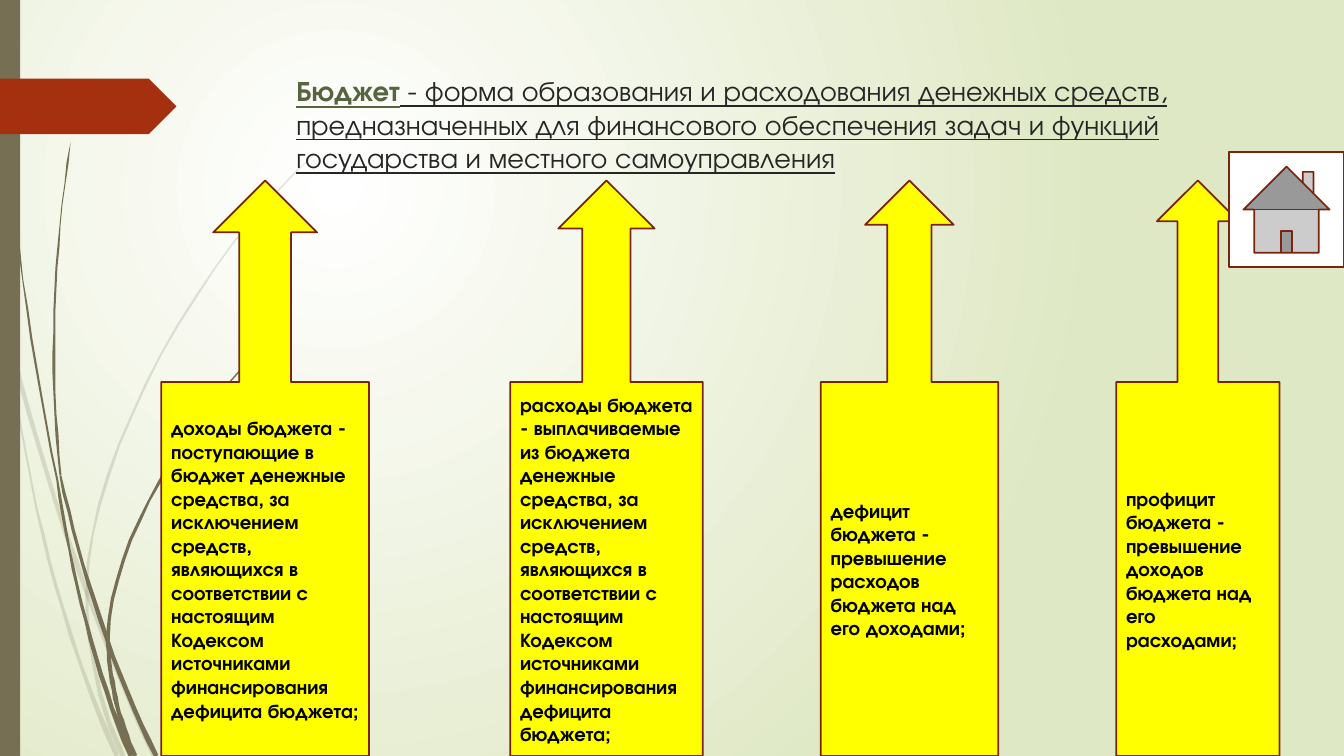
from math import hypot

from lxml.etree import SubElement
from pptx import Presentation
from pptx.dml.color import RGBColor
from pptx.enum.shapes import MSO_SHAPE
from pptx.enum.text import MSO_ANCHOR, PP_ALIGN
from pptx.oxml.ns import qn
from pptx.util import Pt

PX = 9144  # 100 px to the inch
SLIDE_SIZE = (1333, 750)

THEME = {
    "font": "TeX Gyre Adventor",
    "title_size": 20, "callout_size": 14, "line_width": 1.25,
    "center": "FFFFFF", "edge": "DFE8C4",
    "grass": "766F54", "tag": "A53010", "outline": "7A240C",
    "callout": "FFFF00", "button": "FFFFFF",
    "term": "56653E", "title": "262626", "ink": "000000",
}

TITLE_BOX = (284, 68, 975, 140)
TERM = "Бюджет"
DEFINITION = (" - форма образования и расходования денежных средств, предназначенных "
              "для финансового обеспечения задач и функций государства и местного самоуправления")

CALLOUT_TOP, CALLOUT_HEIGHT = 179, 571
CALLOUTS = [  # left, width, text
    (160, 206, "доходы бюджета - поступающие в бюджет денежные средства, за исключением средств, "
               "являющихся в соответствии с настоящим Кодексом источниками финансирования дефицита бюджета;"),
    (506, 191, "расходы бюджета - выплачиваемые из бюджета денежные средства, за исключением средств, "
               "являющихся в соответствии с настоящим Кодексом источниками финансирования дефицита бюджета;"),
    (814, 176, "дефицит бюджета - превышение расходов бюджета над его доходами;"),
    (1107, 162, "профицит бюджета - превышение доходов бюджета над его расходами;"),
]
HOME_BUTTON = (1219, 151, 114, 114)
SIDE_BAR = (0, 0, 20, 750)
TAG = (0, 78, 175, 55)

# Each stem: tip, two control points, root, then its thickness at tip and root
PALE_TUFT = {
    "left stem": ((0, 290), (30, 440), (93, 621), (153, 750), 4, 5),
    "middle stem": ((11, 350), (24, 480), (64, 635), (116, 750), 1, 5),
    "long arc": ((312, 153), (207, 245), (88, 445), (86, 585), 1, 3),
    "arc root": ((86, 585), (86, 650), (103, 710), (122, 750), 3, 5),
}
DARK_TUFT = {
    "left stem": ((4, 0), (3, 170), (27, 330), (57, 477), 1, 2),
    "left root": ((57, 477), (70, 565), (95, 670), (130, 750), 2, 5),
    "upright stem": ((70, 141), (53, 250), (48, 365), (60, 472), 1, 3),
    "upright root": ((60, 472), (80, 565), (114, 670), (155, 750), 3, 5),
    "short arc": ((261, 344), (190, 412), (110, 535), (107, 632), 1, 4),
    "arc root": ((107, 632), (108, 670), (117, 715), (134, 750), 4, 5),
}
TUFTS = [(PALE_TUFT, 20), (DARK_TUFT, 100)]  # stems, opacity in percent
STEM_STEPS = 16


def color(name):
    return RGBColor.from_string(THEME[name])


def apply(target, values):
    for name, value in values.items():
        setattr(target, name, value)


def style(shape, fill, outline=None):
    shape.shadow.inherit = False
    shape.fill.solid()
    shape.fill.fore_color.rgb = color(fill)
    if outline:
        shape.line.color.rgb = color(outline)
        shape.line.width = Pt(THEME["line_width"])
    else:
        shape.line.fill.background()


def add_preset(slide, preset, box, fill, outline=None):
    shape = slide.shapes.add_shape(preset, *(PX * length for length in box))
    style(shape, fill, outline)
    return shape


def curve_point(tip, bend_1, bend_2, root, t):
    """Return the point and the direction of a cubic Bezier curve at t."""
    s = 1 - t
    point, direction = [], []
    for a, b, c, d in zip(tip, bend_1, bend_2, root):
        point.append(s**3 * a + 3 * s**2 * t * b + 3 * s * t**2 * c + t**3 * d)
        direction.append(s**2 * (b - a) + 2 * s * t * (c - b) + t**2 * (d - c))
    return point, direction


def stem_outline(tip, bend_1, bend_2, root, tip_width, root_width):
    """Go down one side of the curve and back up the other, widening to the root."""
    left_side, right_side = [], []
    for step in range(STEM_STEPS + 1):
        t = step / STEM_STEPS
        (x, y), (dx, dy) = curve_point(tip, bend_1, bend_2, root, t)
        half_width = (tip_width + (root_width - tip_width) * t) / 2
        reach = half_width / hypot(dx, dy)
        left_side.append((x - dy * reach, y + dx * reach))
        right_side.append((x + dy * reach, y - dx * reach))
    return left_side + right_side[::-1]


def add_stem(slide, stem, opacity):
    first, *others = stem_outline(*stem)
    builder = slide.shapes.build_freeform(*first, scale=PX)
    builder.add_line_segments(others, close=True)
    shape = builder.convert_to_shape()
    style(shape, "grass")
    fill_color = shape.fill._xPr.find(qn("a:solidFill"))[0]
    SubElement(fill_color, qn("a:alpha"), val=str(opacity * 1000))


def write(shape, runs, size, anchor, **font_values):
    """Fill one left-aligned paragraph with (text, colour, bold) runs."""
    apply(shape.text_frame, {"word_wrap": True, "vertical_anchor": anchor})
    paragraph = shape.text_frame.paragraphs[0]
    paragraph.alignment = PP_ALIGN.LEFT
    for text, color_name, bold in runs:
        run = paragraph.add_run()
        run.text = text
        apply(run.font, {"name": THEME["font"], "size": Pt(THEME[size]), "bold": bold, **font_values})
        run.font.color.rgb = color(color_name)


def paint_background(slide):
    """Spread a round gradient from the upper left of the slide."""
    fill = slide.background.fill
    fill.gradient()
    for stop, name in zip(fill.gradient_stops, ("center", "edge")):
        stop.color.rgb = color(name)
    gradient = fill._xPr.find(qn("a:gradFill"))
    linear = gradient.find(qn("a:lin"))
    circle = SubElement(gradient, qn("a:path"), {"path": "circle"})
    SubElement(circle, qn("a:fillToRect"), l="50000", t="50000", r="100000", b="100000")
    gradient.replace(linear, circle)


def main():
    presentation = Presentation()
    presentation.slide_width, presentation.slide_height = (PX * side for side in SLIDE_SIZE)
    slide = presentation.slides.add_slide(presentation.slide_layouts[6])
    paint_background(slide)

    for stems, opacity in TUFTS:
        for stem in stems.values():
            add_stem(slide, stem, opacity)
    add_preset(slide, MSO_SHAPE.RECTANGLE, SIDE_BAR, "grass")
    add_preset(slide, MSO_SHAPE.PENTAGON, TAG, "tag")

    title = slide.shapes.add_textbox(*(PX * length for length in TITLE_BOX))
    write(title, [(TERM, "term", True), (DEFINITION, "title", False)],
          "title_size", MSO_ANCHOR.TOP, underline=True)

    for left, width, text in CALLOUTS:
        box = (left, CALLOUT_TOP, width, CALLOUT_HEIGHT)
        callout = add_preset(slide, MSO_SHAPE.UP_ARROW_CALLOUT, box, "callout", "outline")
        write(callout, [(text, "ink", True)], "callout_size", MSO_ANCHOR.MIDDLE)
    add_preset(slide, MSO_SHAPE.ACTION_BUTTON_HOME, HOME_BUTTON, "button", "outline")

    presentation.save("out.pptx")


if __name__ == "__main__":
    main()
